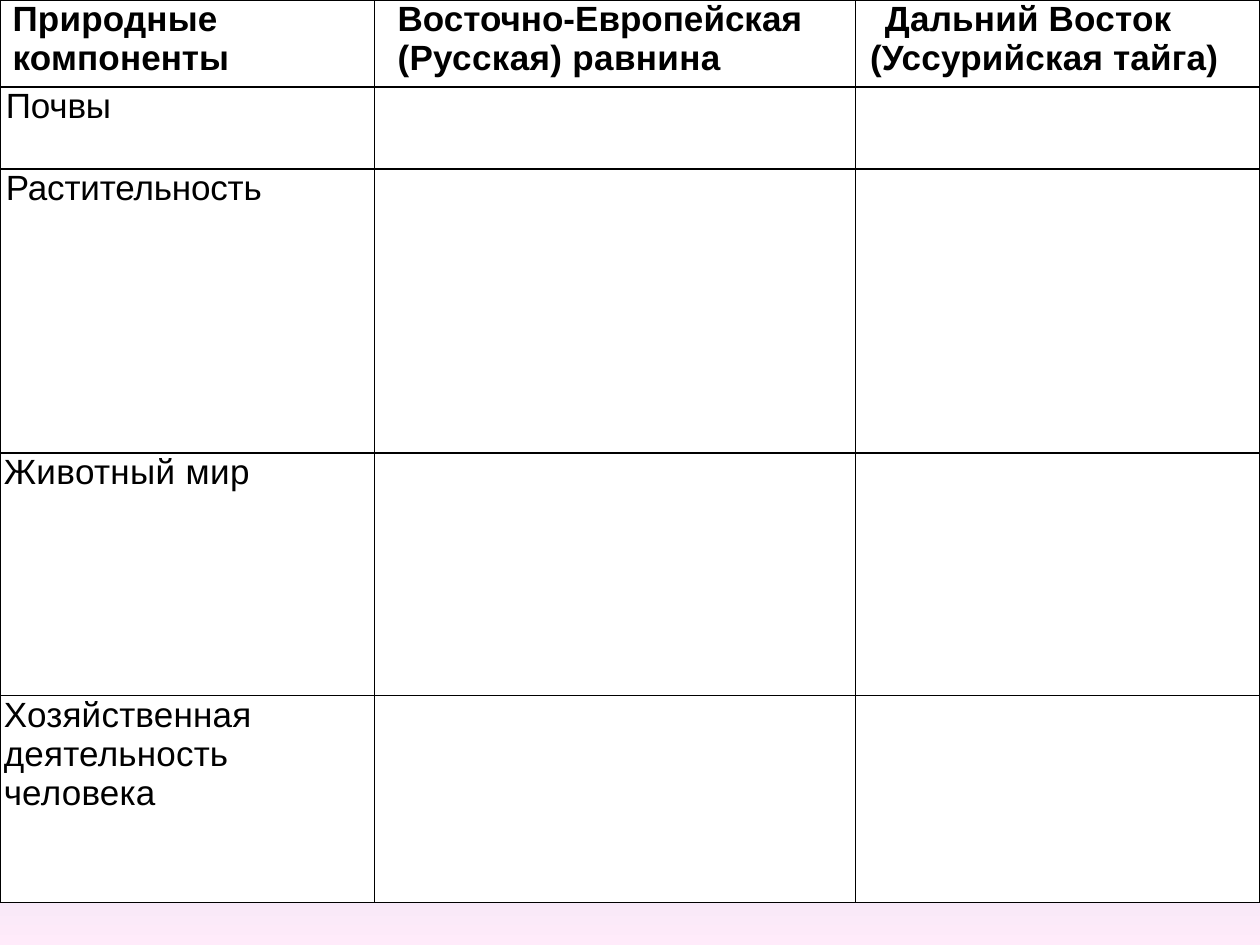
import pptx
import pptx.dml.color
import pptx.oxml
import pptx.oxml.ns
import pptx.util
from lxml import etree

Pt = pptx.util.Pt
RGB = pptx.dml.color.RGBColor.from_string

THEME = {
    "font": "Arial", "size": 20, "ink": "000000", "paper": "FFFFFF", "border": 1,
    "sky": [(0, "5E9EFF"), (40, "85C2FF"), (70, "C4D6EB"), (100, "FFEBFA")],
}
NO_STYLE = "{2D5ABB26-0587-4C30-8999-92F81FD0307C}"

# Each label: left indent, first-line indent, runs of (text, letter spacing)
HEADERS = [
    (5, 0, [("Природные компо", 0.1), ("ненты", 0)]),
    (11, 0, [("Восточно-Европейская ", 0), ("(Русская) равнина", 0.2)]),
    (6, 8.5, [("Дальний Восток (Уссурийская тайга)", 0.1)]),
]
COMPONENTS = [
    (1.2, 0, [("Почвы", -0.1)]),
    (1.2, 0, [("Растительность", -0.1)]),
    (0, 0, [("Животный мир", 0.2)]),
    (0, -0.5, [("Хозяйственная деятельность человека", 0.1)]),
]
COLUMN_WIDTHS = [214, 275, 231]
ROW_HEIGHTS = [49.7, 46.9, 162.2, 138.8, 118.3, 24.1]


def paint_sky(slide):
    fill = slide.background.fill
    fill.gradient()
    fill.gradient_angle = 270  # counter-clockwise, so the colours run downwards
    stops = slide.background._cSld.find(".//" + pptx.oxml.ns.qn("a:gsLst"))
    for stop in list(stops):
        stops.remove(stop)
    for position, color in THEME["sky"]:
        stop = etree.SubElement(stops, pptx.oxml.ns.qn("a:gs"), pos=str(position * 1000))
        etree.SubElement(stop, pptx.oxml.ns.qn("a:srgbClr"), val=color)


def draw_borders(cell, visible_sides):
    properties = cell._tc.get_or_add_tcPr()
    for index, side in enumerate("LRTB"):
        if side in visible_sides:
            paint = f'<a:solidFill><a:srgbClr val="{THEME["ink"]}"/></a:solidFill>'
        else:
            paint = "<a:noFill/>"
        properties.insert(index, pptx.oxml.parse_xml(
            f'<a:ln{side} {pptx.oxml.ns.nsdecls("a")} w="{Pt(THEME["border"])}">'
            f"{paint}</a:ln{side}>"))


def write_label(cell, label, bold):
    left, first_line, runs = label
    paragraph = cell.text_frame.paragraphs[0]
    paragraph_properties = paragraph._p.get_or_add_pPr()
    paragraph_properties.set("marL", str(Pt(left)))
    paragraph_properties.set("indent", str(Pt(first_line)))
    for text, spacing in runs:
        run = paragraph.add_run()
        run.text = text
        run.font.name = THEME["font"]
        run.font.size = Pt(THEME["size"])
        run.font.bold = bold
        run.font.color.rgb = RGB(THEME["ink"])
        run._r.get_or_add_rPr().set("spc", str(round(spacing * 100)))


def main():
    deck = pptx.Presentation()
    deck.slide_width, deck.slide_height = Pt(720), Pt(540)
    slide = deck.slides.add_slide(deck.slide_layouts[6])
    paint_sky(slide)

    frame = slide.shapes.add_table(len(ROW_HEIGHTS), len(COLUMN_WIDTHS), 0, 0,
                                   Pt(sum(COLUMN_WIDTHS)), Pt(sum(ROW_HEIGHTS)))
    comparison = frame.table
    comparison.first_row = comparison.horz_banding = False
    comparison._tbl.tblPr.find(pptx.oxml.ns.qn("a:tableStyleId")).text = NO_STYLE
    for column, width in zip(comparison.columns, COLUMN_WIDTHS):
        column.width = Pt(width)
    for row, height in zip(comparison.rows, ROW_HEIGHTS):
        row.height = Pt(height)

    footer = len(ROW_HEIGHTS) - 1
    for row_index, row in enumerate(comparison.rows):
        for cell in row.cells:
            cell.margin_left = cell.margin_right = Pt(2.2)
            cell.margin_top = cell.margin_bottom = 0
            if row_index == footer:
                cell.fill.background()
                draw_borders(cell, "T")
            else:
                cell.fill.solid()
                cell.fill.fore_color.rgb = RGB(THEME["paper"])
                draw_borders(cell, "LRTB")
    comparison.cell(footer, 0).merge(comparison.cell(footer, len(COLUMN_WIDTHS) - 1))

    for column_index, label in enumerate(HEADERS):
        write_label(comparison.cell(0, column_index), label, bold=True)
    for row_index, label in enumerate(COMPONENTS, start=1):
        write_label(comparison.cell(row_index, 0), label, bold=False)

    deck.save("out.pptx")


if __name__ == "__main__":
    main()
